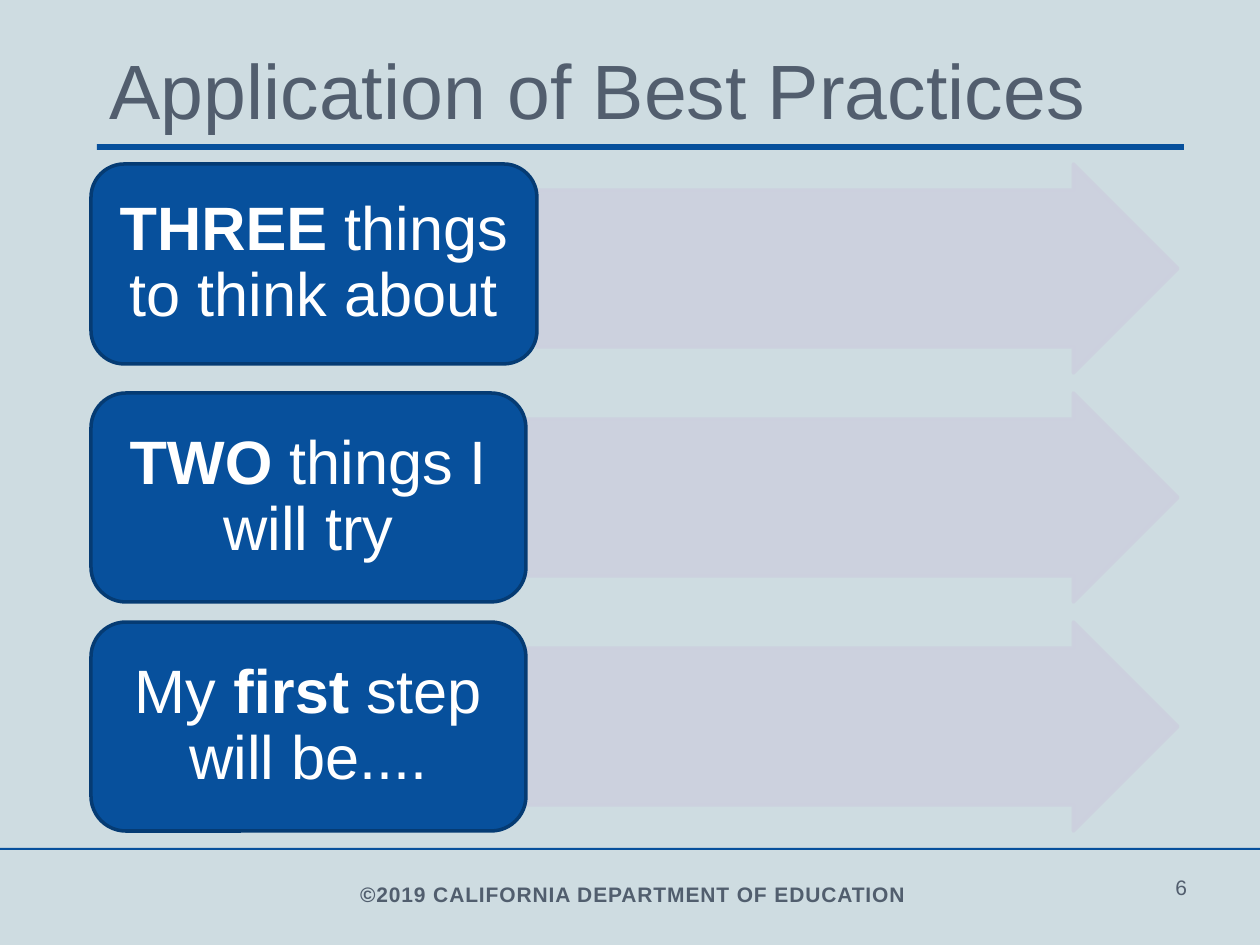
import pptx
import pptx.util
import pptx.dml.color
import pptx.enum.shapes
import pptx.enum.text
import pptx.oxml.ns
import lxml.etree

PX = 914400 / 126
SHAPE = pptx.enum.shapes.MSO_SHAPE
ALIGN = pptx.enum.text.PP_ALIGN
ANCHOR = pptx.enum.text.MSO_ANCHOR

BLUE, NAVY, LAVENDER, SLATE = "07509C", "053B73", "CCD0DE", "525E6E"
BACKGROUND, FOOTER_GRAY, WHITE = "CEDCE1", "515E6E", "FFFFFF"

TITLE = "Application of Best Practices"
FOOTER = "©2019 CALIFORNIA DEPARTMENT OF EDUCATION"
PAGE = "6"
STEPS = [
    {"label": [("THREE", True), (" things to think about", False)], "size": (446, 200)},
    {"label": [("TWO", True), (" things I will try", False)], "size": (435, 209)},
    {"label": [("My ", False), ("first", True), (" step will be....", False)], "size": (435, 209)},
]
STEP_LEFT, STEP_TOP, STEP_PITCH = 91, 164, 229
ARROW_RIGHT, ARROW_HEIGHT = 1178, 209


def px(*lengths):
    return [pptx.util.Emu(round(length * PX)) for length in lengths]


def rgb(color):
    return pptx.dml.color.RGBColor.from_string(color)


def set_alpha(fill_format, percent):
    color = fill_format.fore_color._xFill[0]
    alpha = lxml.etree.SubElement(color, pptx.oxml.ns.qn("a:alpha"))
    alpha.set("val", str(percent * 1000))


def add_block(slide, kind, box, fill, line=None, alpha=None):
    block = slide.shapes.add_shape(kind, *px(*box))
    block.shadow.inherit = False
    block.fill.solid()
    block.fill.fore_color.rgb = rgb(fill)
    if line:
        block.line.color.rgb = rgb(line)
        block.line.width = pptx.util.Pt(2)
    else:
        block.line.fill.background()
    if alpha:
        set_alpha(block.fill, alpha)
        set_alpha(block.line.fill, alpha)
    return block


def format_run(run, size, color, bold=False):
    run.font.name = "Arial"
    run.font.size = pptx.util.Pt(size)
    run.font.bold = bold
    run.font.color.rgb = rgb(color)


def write(frame, parts, size, color, align, anchor, spacing=1.0):
    frame.word_wrap = True
    frame.auto_size = pptx.enum.text.MSO_AUTO_SIZE.NONE
    frame.vertical_anchor = anchor
    paragraph = frame.paragraphs[0]
    paragraph.alignment = align
    paragraph.line_spacing = spacing
    for words, bold in parts:
        run = paragraph.add_run()
        run.text = words
        format_run(run, size, color, bold)
    return paragraph


def add_step(slide, row, step):
    top = STEP_TOP + row * STEP_PITCH
    width, height = step["size"]
    arrow_left = STEP_LEFT + width
    arrow = add_block(slide, SHAPE.RIGHT_ARROW,
                      (arrow_left, top, ARROW_RIGHT - arrow_left, ARROW_HEIGHT),
                      LAVENDER, LAVENDER, 90)
    arrow.adjustments[0] = 0.75
    arrow.adjustments[1] = 0.5
    card = add_block(slide, SHAPE.ROUNDED_RECTANGLE,
                     (STEP_LEFT, top, width, height), BLUE, NAVY)
    frame = card.text_frame
    frame.margin_left, frame.margin_right, frame.margin_top, frame.margin_bottom = px(19, 19, 9, 9)
    write(frame, step["label"], 35, WHITE, ALIGN.CENTER, ANCHOR.MIDDLE, 0.9)


def main():
    deck = pptx.Presentation()
    deck.slide_width, deck.slide_height = px(1260, 945)
    slide = deck.slides.add_slide(deck.slide_layouts[5])
    slide.background.fill.solid()
    slide.background.fill.fore_color.rgb = rgb(BACKGROUND)

    add_block(slide, SHAPE.RECTANGLE, (97, 144, 1087, 6), BLUE)
    add_block(slide, SHAPE.RECTANGLE, (0, 848, 1260, 2), BLUE)

    title = slide.shapes.title
    title.left, title.top, title.width, title.height = px(97, 18, 1087, 124)
    write(title.text_frame, [(TITLE, False)], 44, SLATE, ALIGN.LEFT, ANCHOR.BOTTOM, 0.85)

    for row, step in enumerate(STEPS):
        add_step(slide, row, step)

    footer = slide.shapes.add_textbox(*px(97, 877, 1072, 37))
    notice = write(footer.text_frame, [(FOOTER, True)], 12, FOOTER_GRAY,
                   ALIGN.CENTER, ANCHOR.MIDDLE, 0.95)
    notice.runs[0].font._element.set("spc", "50")

    page = slide.shapes.add_textbox(*px(1163, 868, 97, 59))
    write(page.text_frame, [(PAGE, False)], 12, SLATE, ALIGN.LEFT, ANCHOR.TOP)

    deck.save("out.pptx")


if __name__ == "__main__":
    main()
